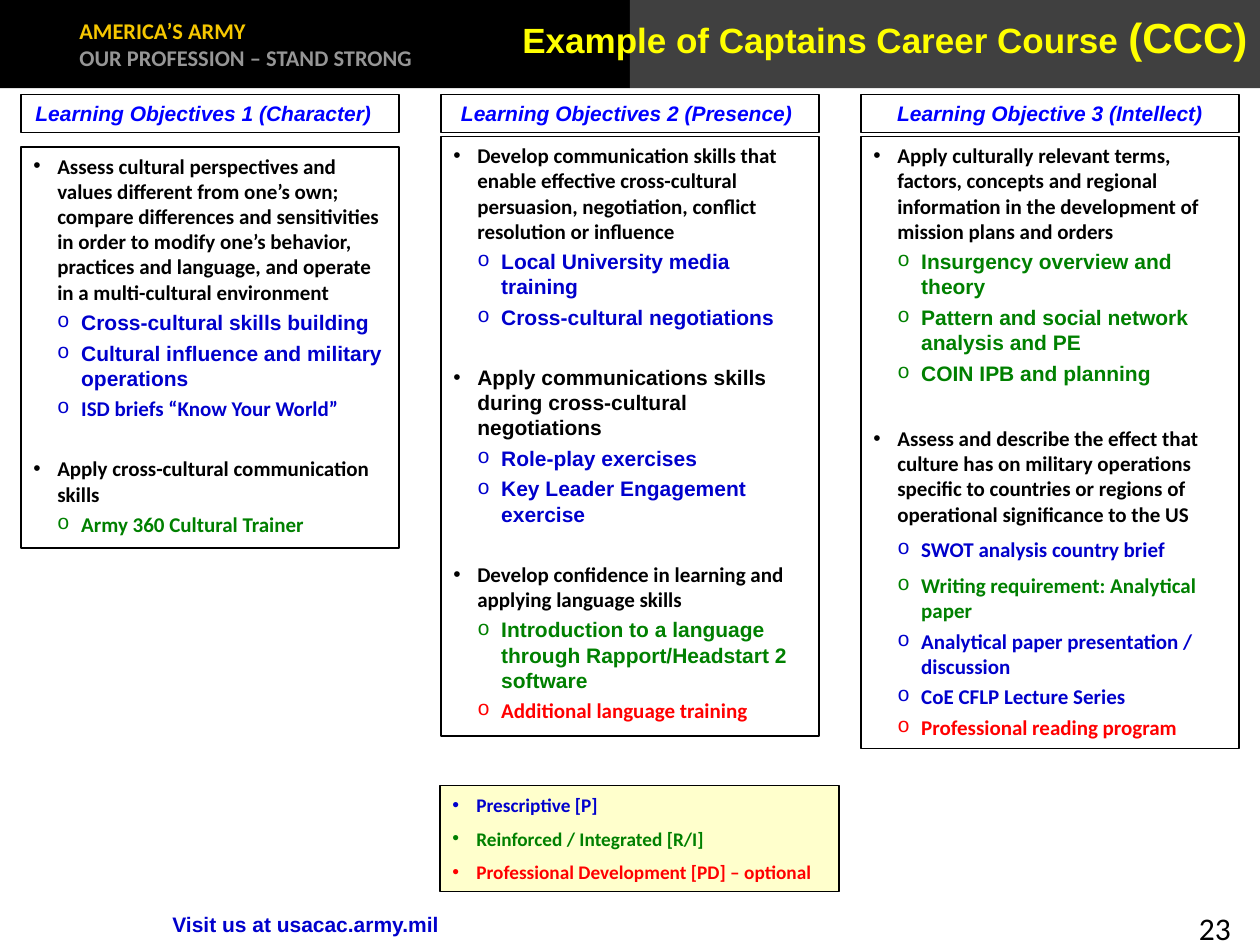
import pptx
import pptx.dml.color
import pptx.enum.shapes
import pptx.enum.text
import pptx.oxml.ns
import pptx.util
from lxml import etree

ALIGN = pptx.enum.text.PP_ALIGN
ANCHOR = pptx.enum.text.MSO_ANCHOR
BLACK, BLUE, GREEN, RED = "000000", "0000CC", "008000", "FF0000"
BULLET_FONTS = {"•": "Arial", "o": "Courier New"}


def color(hex_string):
    return pptx.dml.color.RGBColor.from_string(hex_string)


class SlideBuilder:
    """Builds one slide on a grid of 60 columns by 90 rows."""

    def __init__(self, presentation):
        self.column = presentation.slide_width / 60
        self.row = presentation.slide_height / 90
        self.slide = presentation.slides.add_slide(presentation.slide_layouts[5])

    def place(self, left, top, width, height):
        return (round(left * self.column), round(top * self.row),
                round(width * self.column), round(height * self.row))

    def title(self, parts, area):
        shape = self.slide.shapes.title
        shape.left, shape.top, shape.width, shape.height = self.place(*area)
        shape.element.getparent().append(shape.element)
        frame = shape.text_frame
        frame.auto_size = pptx.enum.text.MSO_AUTO_SIZE.NONE
        frame.vertical_anchor = ANCHOR.TOP
        frame.margin_top = pptx.util.Inches(0.09)
        paragraph = frame.paragraphs[0]
        paragraph.alignment = ALIGN.RIGHT
        self.font(paragraph, 24, "Arial", "FFFF00")
        for text, size in parts:
            run = paragraph.add_run()
            run.text = text
            run.font.size = pptx.util.Pt(size)

    def box(self, area, fill=None, line=BLACK, anchor=ANCHOR.TOP):
        shape = self.slide.shapes.add_shape(
            pptx.enum.shapes.MSO_SHAPE.RECTANGLE, *self.place(*area))
        shape.shadow.inherit = False
        if fill:
            shape.fill.solid()
            shape.fill.fore_color.rgb = color(fill)
        else:
            shape.fill.background()
        if line:
            shape.line.color.rgb = color(line)
            shape.line.width = pptx.util.Pt(0.75)
        else:
            shape.line.fill.background()
        shape.text_frame.word_wrap = True
        shape.text_frame.vertical_anchor = anchor
        return shape.text_frame

    def label(self, text, area, size, name, hex_string, bold=True):
        shape = self.slide.shapes.add_textbox(*self.place(*area))
        shape.text_frame.word_wrap = True
        self.line(shape.text_frame, text, size, name, hex_string, bold=bold)

    def font(self, paragraph, size, name, hex_string, bold=True, italic=False):
        font = paragraph.font
        font.size, font.name = pptx.util.Pt(size), name
        font.bold, font.italic = bold, italic
        font.color.rgb = color(hex_string)

    def line(self, frame, text, size, name, hex_string, bullet=None, level=0,
             before=0, after=0, align=ALIGN.LEFT, bold=True, italic=False):
        first = frame.paragraphs[0]
        paragraph = frame.add_paragraph() if first.runs else first
        paragraph.add_run().text = text
        paragraph.alignment = align
        paragraph.space_before = pptx.util.Pt(0 if paragraph is first else before)
        paragraph.space_after = pptx.util.Pt(after)
        if bullet:
            indent = pptx.util.Inches(0.19)
            properties = paragraph._p.get_or_add_pPr()
            properties.set("marL", str(indent * (level + 1)))
            properties.set("indent", str(-indent))
            for tag, key, value in (("a:buFont", "typeface", BULLET_FONTS[bullet]),
                                    ("a:buChar", "char", bullet)):
                etree.SubElement(properties, pptx.oxml.ns.qn(tag)).set(key, value)
        self.font(paragraph, size, name, hex_string, bold, italic)

    def header(self, text, area, right_margin):
        frame = self.box(area)
        frame.margin_right = pptx.util.Inches(right_margin)
        self.line(frame, text, 12, "Arial", "0000FF", align=ALIGN.CENTER, italic=True)

    def objectives(self, area, topics):
        frame = self.box(area)
        for text, name, before, after, activities in topics:
            self.line(frame, text, 12, name, BLACK, "•", before=before, after=after)
            for activity, activity_name, hex_string, *gap in activities:
                self.line(frame, activity, 12, activity_name, hex_string, "o", 1,
                          before=3, after=sum(gap))


COLUMNS = [
    ("Learning Objectives 1 (Character)", 0.2, 14, 38.2, [
        ("Assess cultural perspectives and values different from one’s own; compare "
         "differences and sensitivities in order to modify one’s behavior, practices "
         "and language, and operate in a multi-cultural environment", "Calibri", 0, 0, [
             ("Cross-cultural skills building", "Arial", BLUE),
             ("Cultural influence and military operations", "Arial", BLUE),
             ("ISD briefs “Know Your World”", "Calibri", BLUE)]),
        ("Apply cross-cultural communication skills", "Calibri", 20, 0, [
            ("Army 360 Cultural Trainer", "Calibri", GREEN)])]),
    ("Learning Objectives 2 (Presence)", 0.15, 13, 57.1, [
        ("Develop communication skills that enable effective cross-cultural persuasion, "
         "negotiation, conflict resolution or influence", "Calibri", 0, 0, [
             ("Local University media training", "Arial", BLUE),
             ("Cross-cultural negotiations", "Arial", BLUE)]),
        ("Apply communications skills during cross-cultural negotiations", "Arial", 20, 0, [
            ("Role-play exercises", "Arial", BLUE),
            ("Key Leader Engagement exercise", "Arial", BLUE)]),
        ("Develop confidence in learning and applying language skills", "Calibri", 20, 0, [
            ("Introduction to a language through Rapport/Headstart 2 software",
             "Arial", GREEN),
            ("Additional language training", "Calibri", RED)])]),
    ("Learning Objective 3 (Intellect)", 0.1, 13, 58.3, [
        ("Apply culturally relevant terms, factors, concepts and regional information "
         "in the development of mission plans and orders", "Calibri", 0, 0, [
             ("Insurgency overview and theory", "Arial", GREEN),
             ("Pattern and social network analysis and PE", "Arial", GREEN),
             ("COIN IPB and planning", "Arial", GREEN)]),
        ("Assess and describe the effect that culture has on military operations specific "
         "to countries or regions of operational significance to the US", "Calibri", 23, 3, [
             ("SWOT analysis country brief", "Calibri", BLUE, 3),
             ("Writing requirement: Analytical paper", "Calibri", GREEN),
             ("Analytical paper presentation / discussion", "Calibri", BLUE),
             ("CoE CFLP Lecture Series", "Calibri", BLUE),
             ("Professional reading program", "Calibri", RED)])]),
]
LEGEND = [("Prescriptive [P]", BLUE), ("Reinforced / Integrated [R/I]", GREEN),
          ("Professional Development [PD] – optional", RED)]


def main():
    presentation = pptx.Presentation()
    presentation.slide_width = pptx.util.Inches(10)
    presentation.slide_height = pptx.util.Inches(7.5)
    builder = SlideBuilder(presentation)

    motto = builder.box((0, 0, 30, 8.4), BLACK, None, ANCHOR.MIDDLE)
    motto.margin_left = pptx.util.Inches(0.63)
    builder.line(motto, "AMERICA’S ARMY", 12.8, "Calibri", "F6C700")
    builder.line(motto, "OUR PROFESSION – STAND STRONG", 12.8, "Calibri", "969696")
    builder.box((30, 0, 30, 8.4), "404040", None)
    builder.title([("Example of Captains Career Course ", 20), ("(CCC)", 24)],
                  (3, 0, 57, 14))

    for index, (heading, right_margin, top, height, topics) in enumerate(COLUMNS):
        left = 1 + 20 * index
        builder.header(heading, (left, 9, 18, 3.6), right_margin)
        builder.objectives((left, top, 18, height), topics)

    legend = builder.box((20.95, 74.8, 19, 10.1), "FFFFCC", anchor=ANCHOR.MIDDLE)
    for text, hex_string in LEGEND:
        builder.line(legend, text, 11, "Calibri", hex_string, "•", before=3, after=3)
    builder.label("Visit us at usacac.army.mil", (7.62, 86.2, 24.5, 3.6), 12, "Arial", BLUE)
    builder.label("23", (56.5, 86, 3.5, 4), 18, "Calibri", BLACK, bold=False)
    presentation.save("out.pptx")


if __name__ == "__main__":
    main()
